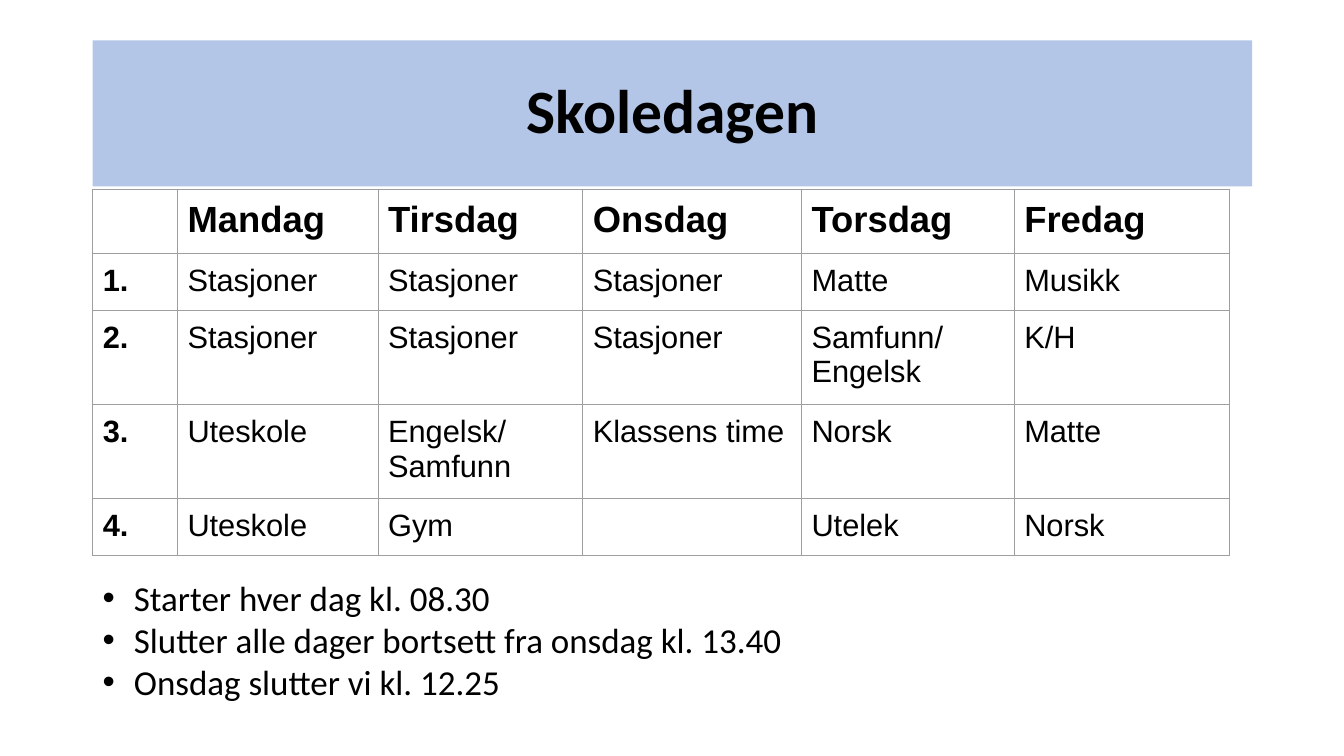
from lxml import etree
from pptx import Presentation
from pptx.dml.color import RGBColor
from pptx.enum.shapes import MSO_SHAPE
from pptx.enum.text import MSO_ANCHOR, PP_ALIGN
from pptx.oxml.ns import qn
from pptx.util import Pt

EMU_PER_PX = 9144  # 100 px to the inch
LEFT = 92
INSET = 10

DAYS = ["", "Mandag", "Tirsdag", "Onsdag", "Torsdag", "Fredag"]
LESSONS = [
    ["1.", "Stasjoner", "Stasjoner", "Stasjoner", "Matte", "Musikk"],
    ["2.", "Stasjoner", "Stasjoner", "Stasjoner", "Samfunn/ Engelsk", "K/H"],
    ["3.", "Uteskole", "Engelsk/ Samfunn", "Klassens time", "Norsk", "Matte"],
    ["4.", "Uteskole", "Gym", "", "Utelek", "Norsk"],
]
COLUMN_WIDTHS = [84, 199, 203, 217, 211, 213]
ROW_HEIGHTS = [63, 56, 93, 93, 56]
TIMES = [
    "Starter hver dag kl. 08.30",
    "Slutter alle dager bortsett fra onsdag kl. 13.40",
    "Onsdag slutter vi kl. 12.25",
]


def px(*lengths):
    """Turn px lengths into a list of EMU lengths."""
    return [length * EMU_PER_PX for length in lengths]


def color(hex_string):
    return RGBColor.from_string(hex_string)


def write(text_frame, *lines, size, font="Calibri", bold=False,
          align=PP_ALIGN.LEFT, spacing=1.0, bullet_indent=0):
    """Write each line as one paragraph, bulleted if bullet_indent is given."""
    text_frame.word_wrap = True
    for index, line in enumerate(lines):
        paragraph = text_frame.add_paragraph() if index else text_frame.paragraphs[0]
        paragraph.alignment = align
        paragraph.line_spacing = spacing
        run = paragraph.add_run()
        run.text = line
        run.font.name = font
        run.font.size = Pt(size)
        run.font.bold = bold
        run.font.color.rgb = color("000000")
        if bullet_indent:
            [indent] = px(bullet_indent)
            properties = paragraph._p.get_or_add_pPr()
            properties.set("marL", str(indent))
            properties.set("indent", str(-indent))
            etree.SubElement(properties, qn("a:buFont"), typeface="Arial")
            etree.SubElement(properties, qn("a:buChar"), char="•")


def add_banner(slide, text, *box):
    banner = slide.shapes.add_shape(MSO_SHAPE.RECTANGLE, *px(*box))
    banner.shadow.inherit = False
    banner.fill.solid()
    banner.fill.fore_color.rgb = color("B3C6E7")
    banner.line.fill.background()
    banner.text_frame.vertical_anchor = MSO_ANCHOR.MIDDLE
    write(banner.text_frame, text, size=44, bold=True,
          align=PP_ALIGN.CENTER, spacing=0.9)


def add_bullets(slide, lines, *box):
    text_box = slide.shapes.add_textbox(*px(*box))
    write(text_box.text_frame, *lines, size=25, bullet_indent=31)


def set_borders(cell, hex_string, width):
    properties = cell._tc.get_or_add_tcPr()
    for position, side in enumerate(("lnL", "lnR", "lnT", "lnB")):
        line = etree.Element(qn(f"a:{side}"), w=str(Pt(width)))
        fill = etree.SubElement(line, qn("a:solidFill"))
        etree.SubElement(fill, qn("a:srgbClr"), val=hex_string)
        properties.insert(position, line)


def add_timetable(slide, rows, left, top):
    box = px(left, top, sum(COLUMN_WIDTHS), sum(ROW_HEIGHTS))
    table = slide.shapes.add_table(len(rows), len(COLUMN_WIDTHS), *box).table
    table.first_row = table.horz_banding = False
    for column, width in zip(table.columns, px(*COLUMN_WIDTHS)):
        column.width = width
    for row, height in zip(table.rows, px(*ROW_HEIGHTS)):
        row.height = height
    for row_index, row in enumerate(rows):
        for column_index, text in enumerate(row):
            cell = table.cell(row_index, column_index)
            cell.fill.background()
            set_borders(cell, "9E9E9E", 0.75)
            [inset] = px(INSET)
            cell.margin_left = cell.margin_right = inset
            cell.margin_top = cell.margin_bottom = inset
            if text:
                is_header = row_index == 0
                write(cell.text_frame, text, size=26 if is_header else 22,
                      font="Arial", bold=is_header or column_index == 0)


def main():
    presentation = Presentation()
    presentation.slide_width, presentation.slide_height = px(1333, 750)
    slide = presentation.slides.add_slide(presentation.slide_layouts[6])
    add_banner(slide, "Skoledagen", LEFT, 40, 1150, 145)
    add_bullets(slide, TIMES, LEFT, 567, 1071, 136)
    add_timetable(slide, [DAYS, *LESSONS], LEFT, 188)
    presentation.save("out.pptx")


if __name__ == "__main__":
    main()
